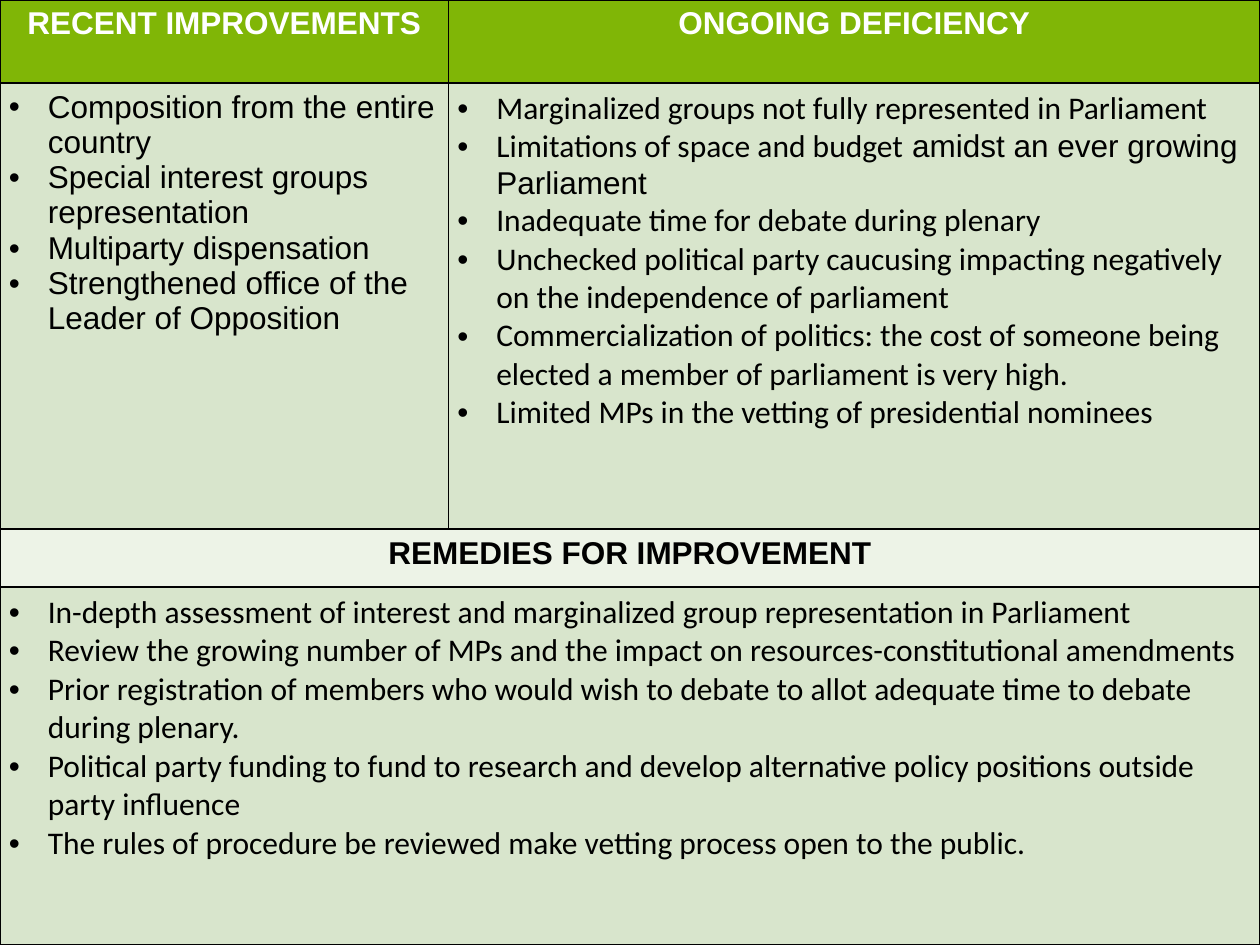
from dataclasses import dataclass

from lxml import etree
from pptx import Presentation
from pptx.dml.color import RGBColor
from pptx.enum.text import PP_ALIGN
from pptx.oxml.ns import qn
from pptx.util import Inches, Pt

CENTER = PP_ALIGN.CENTER
LEFT = PP_ALIGN.LEFT


@dataclass(frozen=True)
class Theme:
    header_fill: str = "80B606"
    body_fill: str = "D8E5CC"
    band_fill: str = "EDF3E7"
    light: str = "FFFFFF"
    dark: str = "000000"
    heading_font: str = "Arial"
    body_font: str = "Calibri"
    text_size: int = 18
    border_width: int = 1


THEME = Theme()
COLUMN_WIDTHS = (3.56, 6.44)
ROW_HEIGHTS = (0.66, 3.54, 0.46, 2.84)
HANGING_INDENT = 0.31

IMPROVEMENTS = (
    "Composition from the entire country",
    "Special interest groups representation",
    "Multiparty dispensation",
    "Strengthened office of the Leader of Opposition",
)
DEFICIENCIES = (
    "Marginalized groups not fully represented in Parliament",
    ("Limitations of space and budget", " amidst an ever growing Parliament"),
    "Inadequate time for debate during plenary",
    "Unchecked political party caucusing impacting negatively on the "
    "independence of parliament",
    "Commercialization of politics: the cost of someone being elected a "
    "member of parliament is very high.",
    "Limited MPs in the vetting of presidential nominees",
)
REMEDIES = (
    "In-depth assessment of interest and marginalized group representation "
    "in Parliament",
    "Review the growing number of MPs and the impact on "
    "resources-constitutional amendments",
    "Prior registration of members who would wish to debate to allot "
    "adequate time to debate during plenary.",
    "Political party funding to fund to research and develop alternative "
    "policy positions outside party influence",
    "The rules of procedure be reviewed make vetting process open to the public.",
)


def add_run(paragraph, text, font, color=THEME.dark, bold=False):
    run = paragraph.add_run()
    run.text = text
    run.font.name = font
    run.font.size = Pt(THEME.text_size)
    run.font.bold = bold
    run.font.color.rgb = RGBColor.from_string(color)


def add_bullet(paragraph):
    properties = paragraph._p.get_or_add_pPr()
    properties.set("marL", str(Inches(HANGING_INDENT)))
    properties.set("indent", str(-Inches(HANGING_INDENT)))
    etree.SubElement(properties, qn("a:buFont")).set("typeface", THEME.heading_font)
    etree.SubElement(properties, qn("a:buChar")).set("char", "•")


def add_borders(cell):
    properties = cell._tc.get_or_add_tcPr()
    for side in ("lnL", "lnR", "lnT", "lnB"):
        line = etree.SubElement(properties, qn(f"a:{side}"))
        line.set("w", str(Pt(THEME.border_width)))
        fill = etree.SubElement(line, qn("a:solidFill"))
        etree.SubElement(fill, qn("a:srgbClr")).set("val", THEME.dark)


def style_cell(cell, fill):
    cell.margin_left = cell.margin_right = Inches(0.07)
    cell.margin_top = cell.margin_bottom = Inches(0.05)
    add_borders(cell)
    cell.fill.solid()
    cell.fill.fore_color.rgb = RGBColor.from_string(fill)


def write_heading(cell, text, color):
    paragraph = cell.text_frame.paragraphs[0]
    paragraph.alignment = CENTER
    add_run(paragraph, text, THEME.heading_font, color, bold=True)


def write_bullets(cell, items, font):
    frame = cell.text_frame
    for index, item in enumerate(items):
        paragraph = frame.add_paragraph() if index else frame.paragraphs[0]
        paragraph.alignment = LEFT
        add_bullet(paragraph)
        parts = (item,) if isinstance(item, str) else item
        for text, face in zip(parts, (font, THEME.heading_font)):
            add_run(paragraph, text, face)


def add_grid(slide):
    table = slide.shapes.add_table(
        len(ROW_HEIGHTS), len(COLUMN_WIDTHS),
        Inches(0), Inches(0), Inches(10), Inches(7.5),
    ).table
    for column, width in zip(table.columns, COLUMN_WIDTHS):
        column.width = Inches(width)
    for row, height in zip(table.rows, ROW_HEIGHTS):
        row.height = Inches(height)
    row_fills = (THEME.header_fill, THEME.body_fill, THEME.band_fill, THEME.body_fill)
    for row, fill in zip(table.rows, row_fills):
        for cell in row.cells:
            style_cell(cell, fill)
    for row in (2, 3):
        table.cell(row, 0).merge(table.cell(row, 1))
    return table


def main():
    presentation = Presentation()
    presentation.slide_width = Inches(10)
    presentation.slide_height = Inches(7.5)
    slide = presentation.slides.add_slide(presentation.slide_layouts[6])
    table = add_grid(slide)
    write_heading(table.cell(0, 0), "RECENT IMPROVEMENTS", THEME.light)
    write_heading(table.cell(0, 1), "ONGOING DEFICIENCY", THEME.light)
    write_bullets(table.cell(1, 0), IMPROVEMENTS, THEME.heading_font)
    write_bullets(table.cell(1, 1), DEFICIENCIES, THEME.body_font)
    write_heading(table.cell(2, 0), "REMEDIES FOR IMPROVEMENT", THEME.dark)
    write_bullets(table.cell(3, 0), REMEDIES, THEME.body_font)
    presentation.save("out.pptx")


if __name__ == "__main__":
    main()
